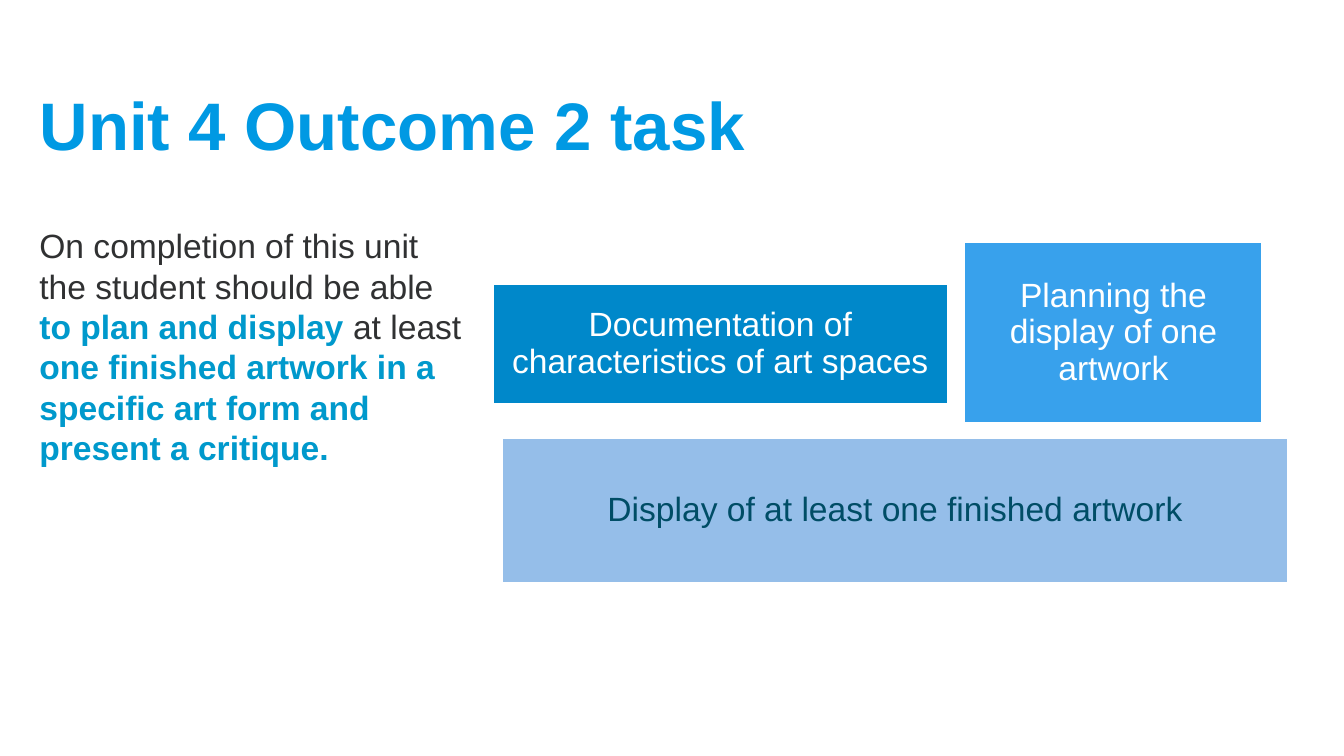
from pptx import Presentation
from pptx.dml.color import RGBColor
from pptx.enum.shapes import MSO_SHAPE as SHAPE
from pptx.enum.text import MSO_ANCHOR as ANCHOR, PP_ALIGN as ALIGN
from pptx.util import Inches, Pt


def add_run(p, text, size, color, bold=False):
    r = p.add_run()
    r.text = text
    r.font.name = "Arial"
    r.font.size = Pt(size)
    r.font.bold = bold
    r.font.color.rgb = RGBColor.from_string(color)


def place(x, y, w, h):
    """Turn percentages of the slide's width and height into lengths."""
    return int(x * col), int(y * row), int(w * col), int(h * row)


# A 16:9 slide on a grid of 100 columns and 100 rows
prs = Presentation()
prs.slide_width = Inches(10)
prs.slide_height = prs.slide_width * 9 // 16
col, row = prs.slide_width / 100, prs.slide_height / 100
s = prs.slides.add_slide(prs.slide_layouts[5])

# Title
title = s.shapes.title
title.left, title.top, title.width, title.height = place(1.95, 8, 95.3, 16.7)
tf = title.text_frame
tf.vertical_anchor = ANCHOR.MIDDLE
p = tf.paragraphs[0]
p.alignment = ALIGN.LEFT
add_run(p, "Unit 4 Outcome 2 task", 36, "0099E3", True)

# Outcome statement, key phrases in bold blue
tf = s.shapes.add_textbox(*place(1.95, 28.93, 33.9, 57.8)).text_frame
tf.word_wrap = True
p = tf.paragraphs[0]
for text, key in [
    ("On completion of this unit the student should be able ", False),
    ("to plan and display ", True),
    ("at least ", False),
    ("one finished artwork in a specific art form and present a critique.", True),
]:
    add_run(p, text, 18, "0099CC" if key else "303132", key)

# Task blocks: place on the grid, fill, text colour, text
blocks = [
    ((36.6, 37.42, 34, 16.2), "0088CA", "FFFFFF",
     "Documentation of characteristics of art spaces"),
    ((71.7, 31.93, 22.3, 24.2), "38A1EC", "FFFFFF",
     "Planning the display of one artwork"),
    ((37.3, 57.8, 58.6, 19.4), "95BEE9", "004D66",
     "Display of at least one finished artwork"),
]
for area, fill, color, text in blocks:
    sp = s.shapes.add_shape(SHAPE.RECTANGLE, *place(*area))
    sp.shadow.inherit = False
    sp.fill.solid()
    sp.fill.fore_color.rgb = RGBColor.from_string(fill)
    sp.line.color.rgb = RGBColor.from_string("FFFFFF")
    sp.line.width = Pt(2)
    tf = sp.text_frame
    tf.word_wrap = True
    tf.vertical_anchor = ANCHOR.MIDDLE
    tf.margin_left = tf.margin_right = tf.margin_top = tf.margin_bottom = Inches(0.07)
    p = tf.paragraphs[0]
    p.alignment = ALIGN.CENTER
    p.line_spacing = 0.9
    add_run(p, text, 18, color)

prs.save("out.pptx")
